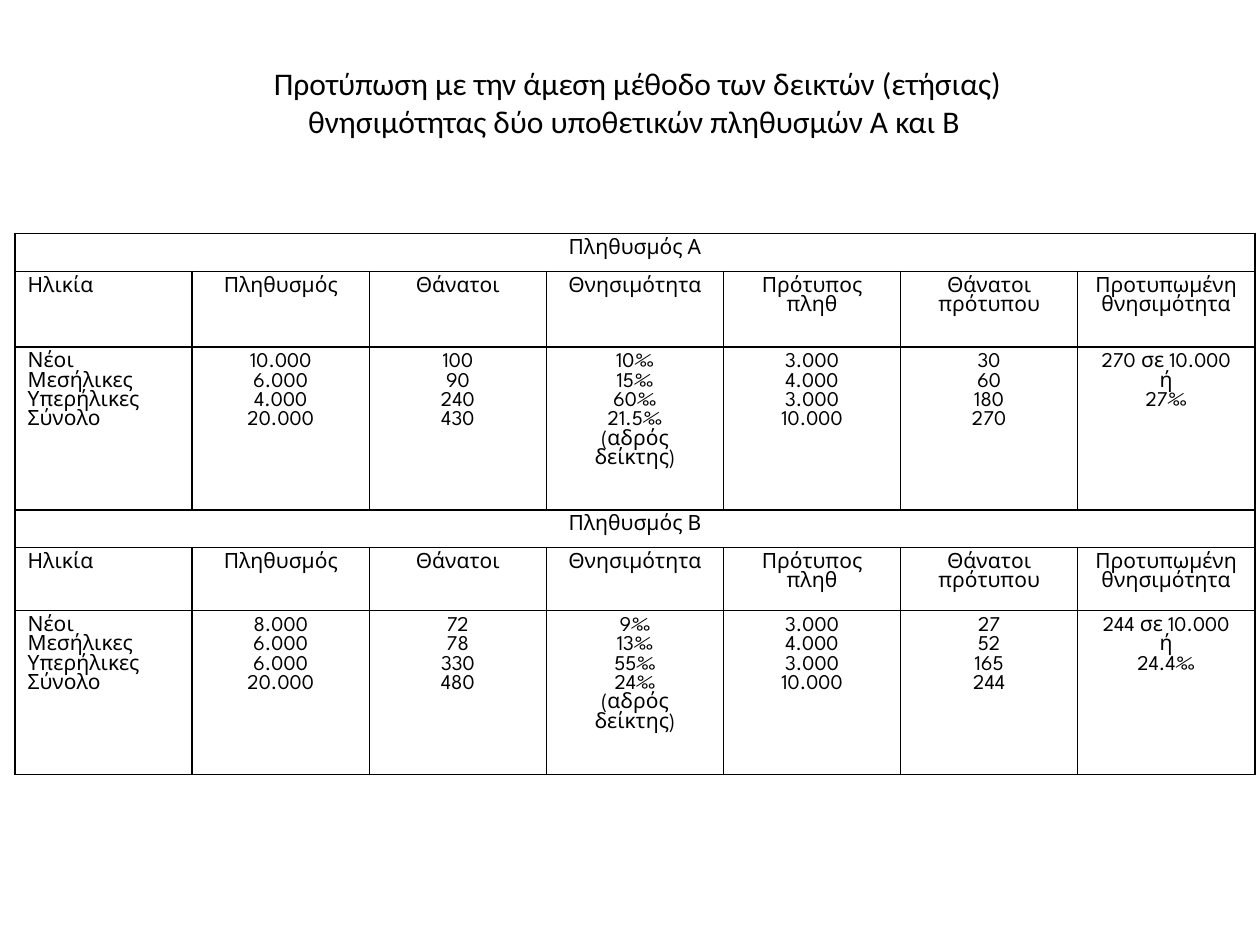
from lxml import etree
from pptx import Presentation
from pptx.dml.color import RGBColor
from pptx.enum import text as enum_text
from pptx.oxml import ns
from pptx.util import Pt

BLACK = RGBColor(0x00, 0x00, 0x00)
LEFT = enum_text.PP_ALIGN.LEFT
CENTER = enum_text.PP_ALIGN.CENTER

TITLE = [
    "Προτύπωση με την άμεση μέθοδο των δεικτών (ετήσιας)",
    "θνησιμότητας δύο υποθετικών πληθυσμών Α και Β ",
]
HEADINGS = ["Ηλικία", "Πληθυσμός", "Θάνατοι", "Θνησιμότητα", "Πρότυπος πληθ",
            "Θάνατοι πρότυπου", "Προτυπωμένη θνησιμότητα"]
AGES = ["Νέοι", "Μεσήλικες", "Υπερήλικες", "Σύνολο"]
STANDARD_POPULATION = ["3.000", "4.000", "3.000", "10.000"]
CRUDE_RATE = "(αδρός δείκτης)"

# Name, population, deaths, mortality, standard deaths, standardised mortality
POPULATIONS = [
    ("Πληθυσμός Α",
     ["10.000", "6.000", "4.000", "20.000"],
     ["100", "90", "240", "430"],
     ["10‰", "15‰", "60‰", "21.5‰"],
     ["30", "60", "180", "270"],
     ["270 σε 10.000", "ή", "27‰"]),
    ("Πληθυσμός Β",
     ["8.000", "6.000", "6.000", "20.000"],
     ["72", "78", "330", "480"],
     ["9‰", "13‰", "55‰", "24‰"],
     ["27", "52", "165", "244"],
     ["244 σε 10.000", "ή", "24.4‰"]),
]
ROW_HEIGHTS = [21.6, 43.2, 93.2, 21.6, 36, 93.6]


def write_text(frame, lines, font="League Spartan", size=12, color=BLACK, align=CENTER):
    """Fill a text frame with one paragraph per line."""
    for index, line in enumerate(lines):
        paragraph = frame.paragraphs[0] if index == 0 else frame.add_paragraph()
        paragraph.alignment = align
        run = paragraph.add_run()
        run.text = line
        run.font.name = font
        run.font.size = Pt(size)
        run.font.color.rgb = color


class SlideBuilder:
    def __init__(self, slide, title_font="Calibri", title_size=18, border=1):
        self.slide = slide
        self.title_font = title_font
        self.title_size = title_size
        self.border = border

    def title(self, lines, left, top, width, height):
        shape = self.slide.shapes.add_textbox(Pt(left), Pt(top), Pt(width), Pt(height))
        frame = shape.text_frame
        frame.word_wrap = False
        frame.auto_size = enum_text.MSO_AUTO_SIZE.SHAPE_TO_FIT_TEXT
        write_text(frame, lines, font=self.title_font, size=self.title_size)

    def table(self, rows, heights, left, top, width):
        """Add a bordered table; a row with a single entry spans every column."""
        columns = max(len(row) for row in rows)
        shape = self.slide.shapes.add_table(
            len(rows), columns, Pt(left), Pt(top), Pt(width), Pt(sum(heights)))
        table = shape.table
        table.first_row = False
        table.horz_banding = False
        for column in table.columns:
            column.width = Pt(width / columns)
        for index, (row, height) in enumerate(zip(rows, heights)):
            table.rows[index].height = Pt(height)
            for column in range(columns):
                self.style_cell(table.cell(index, column))
            if len(row) == 1:
                table.cell(index, 0).merge(table.cell(index, columns - 1))
            for column, lines in enumerate(row):
                align = LEFT if column == 0 and len(row) > 1 else CENTER
                write_text(table.cell(index, column).text_frame, lines, align=align)

    def style_cell(self, cell):
        properties = cell._tc.get_or_add_tcPr()
        for side in ("L", "R", "T", "B"):
            line = etree.SubElement(properties, ns.qn(f"a:ln{side}"), w=str(Pt(self.border)))
            fill = etree.SubElement(line, ns.qn("a:solidFill"))
            etree.SubElement(fill, ns.qn("a:srgbClr"), val=str(BLACK))
        cell.fill.background()


def population_rows():
    rows = []
    for name, population, deaths, mortality, standard_deaths, standardised in POPULATIONS:
        rows.append([[name]])
        rows.append([[heading] for heading in HEADINGS])
        rows.append([AGES, population, deaths, mortality + [CRUDE_RATE],
                     STANDARD_POPULATION, standard_deaths, standardised])
    return rows


def main():
    presentation = Presentation()
    presentation.slide_width = Pt(720)
    presentation.slide_height = Pt(540)
    builder = SlideBuilder(presentation.slides.add_slide(presentation.slide_layouts[6]))
    builder.table(population_rows(), ROW_HEIGHTS, left=8.64, top=133.4, width=708.5)
    builder.title(TITLE, left=132.5, top=33.1, width=463.7, height=50.4)
    presentation.save("out.pptx")


if __name__ == "__main__":
    main()
